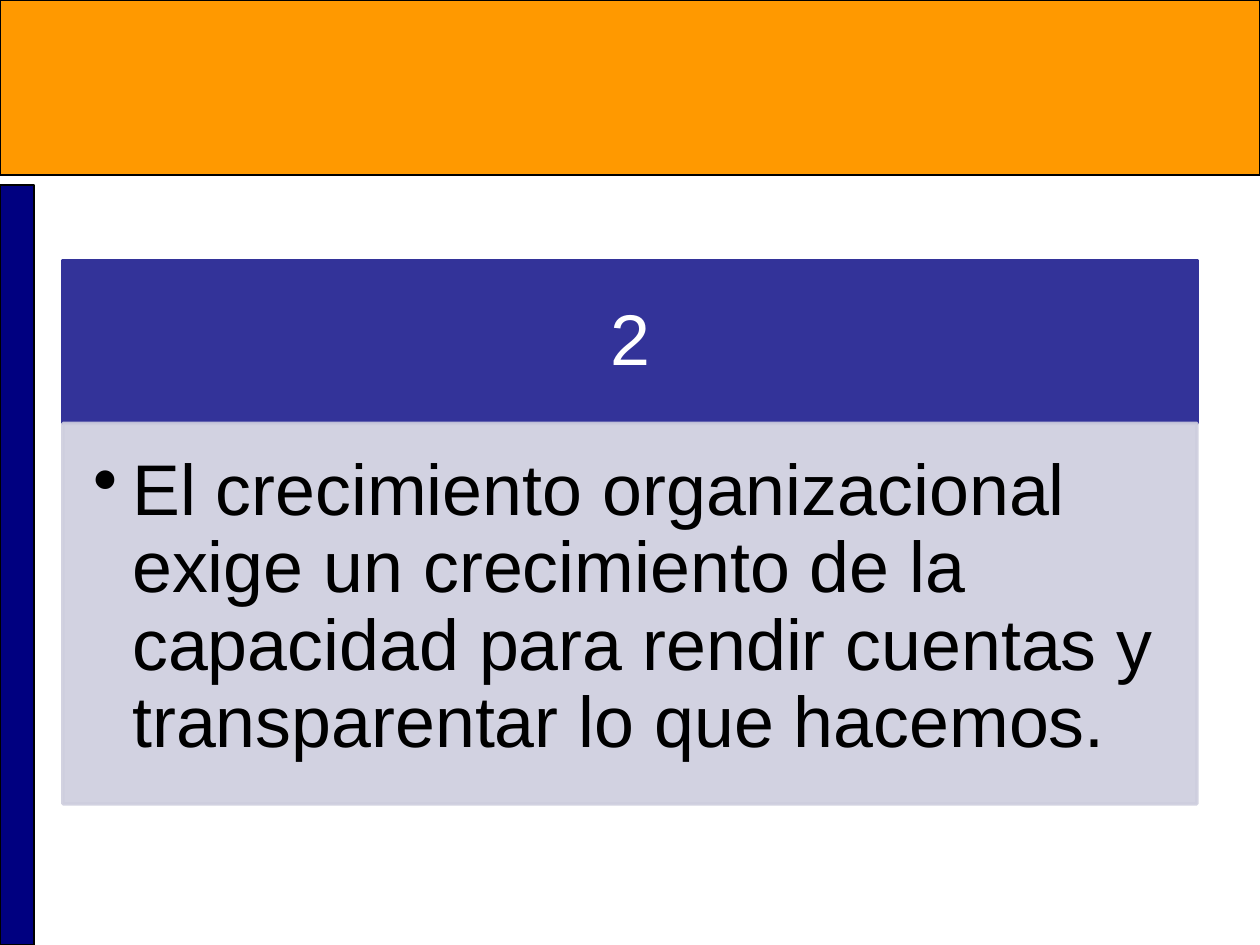
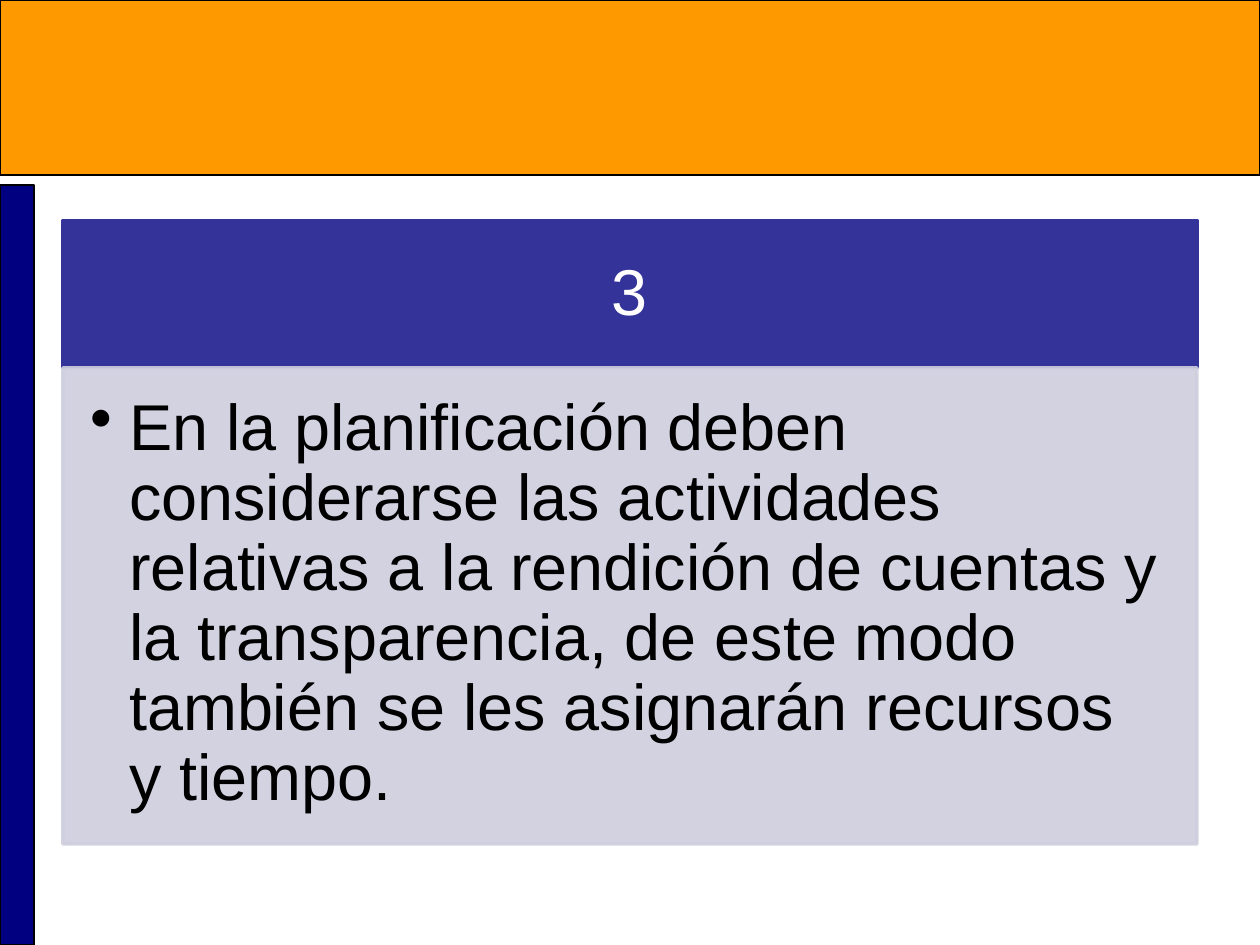
from dataclasses import dataclass

import lxml.etree
import pptx
import pptx.dml.color
import pptx.enum.shapes
import pptx.enum.text
import pptx.oxml.ns
import pptx.shapes.autoshape
import pptx.slide
import pptx.text.text
import pptx.util
from pptx.dml.color import RGBColor
from pptx.util import Cm, Pt

ORANGE = RGBColor(0xFF, 0x99, 0x00)
NAVY = RGBColor(0x00, 0x00, 0x80)
INDIGO = RGBColor(0x33, 0x33, 0x99)
LAVENDER = RGBColor(0xCE, 0xCE, 0xDE)
BLACK = RGBColor(0x00, 0x00, 0x00)
WHITE = RGBColor(0xFF, 0xFF, 0xFF)

FONT = "Arial"
CARD_LEFT = Cm(1.27)
CARD_WIDTH = Cm(22.86)
CARD_MIDDLE = Cm(10.73)
BULLET_INDENT = Cm(0.79)


@dataclass(frozen=True)
class Block:
    left: int
    top: int
    width: int
    height: int
    fill: RGBColor
    line: RGBColor
    line_points: float


@dataclass(frozen=True)
class Card:
    number: str
    statement: str
    font_points: int
    header_height: int
    body_height: int


BANDS = [
    Block(Cm(0), Cm(0), Cm(25.4), Cm(3.53), ORANGE, BLACK, 0.75),
    Block(Cm(0), Cm(3.73), Cm(0.69), Cm(15.32), NAVY, BLACK, 0.75),
]

CARDS = [
    Card(
        "2",
        "El crecimiento organizacional exige un crecimiento de la capacidad "
        "para rendir cuentas y transparentar lo que hacemos.",
        41, Cm(3.28), Cm(7.67),
    ),
    Card(
        "3",
        "En la planificación deben considerarse las actividades relativas a "
        "la rendición de cuentas y la transparencia, de este modo también se "
        "les asignarán recursos y tiempo.",
        37, Cm(2.97), Cm(9.6),
    ),
]


def add_block(page: pptx.slide.Slide, block: Block) -> pptx.shapes.autoshape.Shape:
    shape = page.shapes.add_shape(
        pptx.enum.shapes.MSO_SHAPE.RECTANGLE,
        block.left, block.top, block.width, block.height,
    )
    shape.shadow.inherit = False
    shape.fill.solid()
    shape.fill.fore_color.rgb = block.fill
    shape.line.color.rgb = block.line
    shape.line.width = Pt(block.line_points)
    return shape


def set_opacity(shape: pptx.shapes.autoshape.Shape, percent: int) -> None:
    """Apply one opacity to both the fill and the outline."""
    for color in shape._element.spPr.iter(pptx.oxml.ns.qn("a:srgbClr")):
        alpha = lxml.etree.SubElement(color, pptx.oxml.ns.qn("a:alpha"))
        alpha.set("val", str(percent * 1000))


def add_bullet(paragraph: pptx.text.text._Paragraph) -> None:
    properties = paragraph._p.get_or_add_pPr()
    properties.set("marL", str(BULLET_INDENT))
    properties.set("indent", str(-BULLET_INDENT))
    bullet = lxml.etree.SubElement(properties, pptx.oxml.ns.qn("a:buChar"))
    bullet.set("char", "•")


def write_text(
    shape: pptx.shapes.autoshape.Shape,
    text: str,
    font_points: int,
    color: RGBColor,
    inset_ratios: tuple[float, float, float, float],
    bulleted: bool = False,
) -> None:
    """Write one paragraph; the insets (left, top, right, bottom) scale with the font."""
    frame = shape.text_frame
    frame.word_wrap = True
    (frame.margin_left, frame.margin_top, frame.margin_right, frame.margin_bottom) = (
        Pt(font_points * ratio) for ratio in inset_ratios
    )
    paragraph = frame.paragraphs[0]
    paragraph.text = text
    if bulleted:
        add_bullet(paragraph)
        frame.vertical_anchor = pptx.enum.text.MSO_ANCHOR.TOP
        paragraph.alignment = pptx.enum.text.PP_ALIGN.LEFT
    else:
        frame.vertical_anchor = pptx.enum.text.MSO_ANCHOR.MIDDLE
        paragraph.alignment = pptx.enum.text.PP_ALIGN.CENTER
    paragraph.line_spacing = 0.9
    paragraph.font.name = FONT
    paragraph.font.size = Pt(font_points)
    paragraph.font.color.rgb = color


def add_card(page: pptx.slide.Slide, card: Card) -> None:
    """Stack the number header on the statement, centred on CARD_MIDDLE."""
    top = CARD_MIDDLE - (card.header_height + card.body_height) // 2
    header = add_block(
        page,
        Block(CARD_LEFT, top, CARD_WIDTH, card.header_height, INDIGO, INDIGO, 2),
    )
    write_text(header, card.number, card.font_points, WHITE, (0.56, 0.32, 0.56, 0.32))

    body = add_block(
        page,
        Block(CARD_LEFT, top + card.header_height, CARD_WIDTH, card.body_height,
              LAVENDER, LAVENDER, 2),
    )
    set_opacity(body, 90)
    write_text(body, card.statement, card.font_points, BLACK,
               (0.42, 0.42, 0.56, 0.63), bulleted=True)


def main() -> None:
    deck = pptx.Presentation()
    deck.slide_width = Cm(25.4)
    deck.slide_height = Cm(19.05)
    blank_layout = deck.slide_layouts[6]
    for card in CARDS:
        page = deck.slides.add_slide(blank_layout)
        for band in BANDS:
            add_block(page, band)
        add_card(page, card)
    deck.save("out.pptx")


if __name__ == "__main__":
    main()
